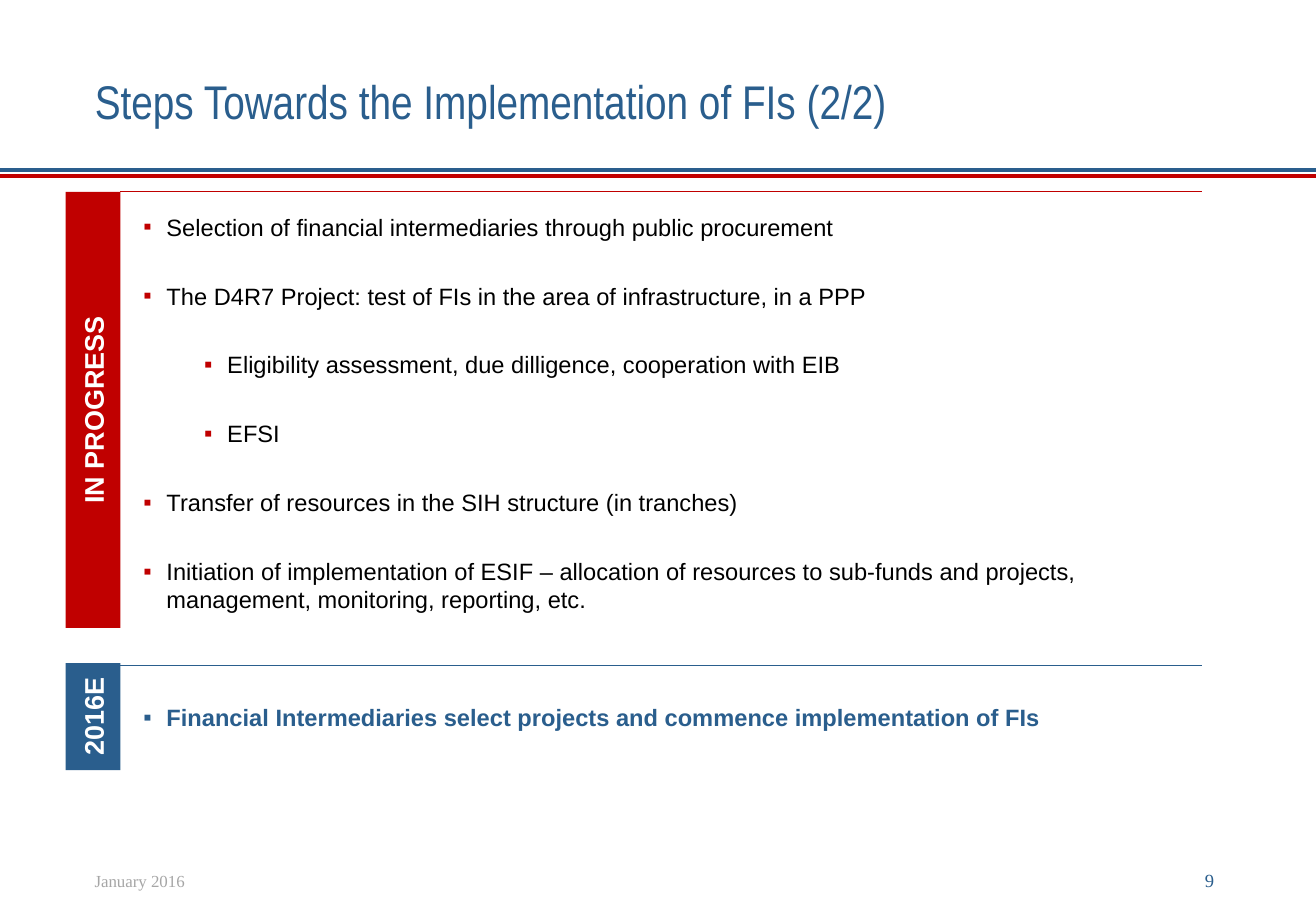
from lxml import etree
from pptx import Presentation
from pptx.dml.color import RGBColor
from pptx.enum.shapes import MSO_CONNECTOR, MSO_SHAPE
from pptx.enum.text import MSO_ANCHOR, MSO_AUTO_SIZE, PP_ALIGN
from pptx.oxml.ns import qn
from pptx.util import Inches, Pt

RECTANGLE = MSO_SHAPE.RECTANGLE
STRAIGHT = MSO_CONNECTOR.STRAIGHT
LEFT, CENTER, RIGHT = PP_ALIGN.LEFT, PP_ALIGN.CENTER, PP_ALIGN.RIGHT
TOP, MIDDLE = MSO_ANCHOR.TOP, MSO_ANCHOR.MIDDLE
NO_FIT = MSO_AUTO_SIZE.NONE

BLUE = RGBColor(0x2A, 0x5E, 0x8D)
RED = RGBColor(0xC0, 0x00, 0x00)
GRAY = RGBColor(0xA6, 0xA6, 0xA6)
BLACK = RGBColor(0, 0, 0)
WHITE = RGBColor(255, 255, 255)

WIDTH, HEIGHT = 10.83, 7.5
TWO_CONTENT_LAYOUT = 3

# Each step is a level and its text.
STEPS_IN_PROGRESS = [
    (0, "Selection of financial intermediaries through public procurement"),
    (0, "The D4R7 Project: test of FIs in the area of infrastructure, in a PPP"),
    (1, "Eligibility assessment, due dilligence, cooperation with EIB"),
    (1, "EFSI"),
    (0, "Transfer of resources in the SIH structure (in tranches)"),
    (0, "Initiation of implementation of ESIF – allocation of resources to "
        "sub-funds and projects, management, monitoring, reporting, etc."),
]
STEPS_EXPECTED = [
    (0, "Financial Intermediaries select projects and commence implementation of FIs"),
]


class SlideBuilder:
    """Holds the current slide and the style its elements share."""

    body_font = "Arial"
    title_font = "Arial Narrow"
    footer_font = "Times New Roman"
    bullet = "▪"
    bullet_indent = 0.19
    level_indent = 0.5

    def __init__(self, slide):
        self.slide = slide

    def place(self, shape, left, top, width, height):
        shape.left, shape.top = Inches(left), Inches(top)
        shape.width, shape.height = Inches(width), Inches(height)

    def frame(self, shape, anchor):
        text_frame = shape.text_frame
        text_frame.word_wrap = True
        text_frame.auto_size = NO_FIT
        text_frame.vertical_anchor = anchor
        return text_frame

    def add_text(self, paragraph, text, font, size, color, bold=False, align=LEFT):
        paragraph.alignment = align
        run = paragraph.add_run()
        run.text = text
        run.font.name, run.font.size = font, Pt(size)
        run.font.bold = bold
        run.font.color.rgb = color

    def title(self, text, *box):
        shape = self.slide.shapes.title
        self.place(shape, *box)
        paragraph = self.frame(shape, MIDDLE).paragraphs[0]
        paragraph.line_spacing = 0.9
        self.add_text(paragraph, text, self.title_font, 28, BLUE)

    def rule(self, left, right, y, color, weight):
        line = self.slide.shapes.add_connector(
            STRAIGHT, Inches(left), Inches(y), Inches(right), Inches(y))
        line.line.color.rgb = color
        line.line.width = Pt(weight)
        etree.SubElement(line.element.spPr, qn("a:effectLst"))

    def phase_bar(self, text, color, *box):
        """Draw a filled bar whose label reads upwards."""
        bar = self.slide.shapes.add_shape(RECTANGLE, *map(Inches, box))
        bar.shadow.inherit = False
        bar.fill.solid()
        bar.fill.fore_color.rgb = color
        bar.line.fill.background()
        text_frame = self.frame(bar, MIDDLE)
        bar.element.txBody.find(qn("a:bodyPr")).set("vert", "vert270")
        self.add_text(text_frame.paragraphs[0], text, self.body_font, 16, WHITE,
                      bold=True, align=CENTER)

    def add_bullet(self, paragraph, color):
        indent = self.bullet_indent + self.level_indent * paragraph.level
        properties = paragraph._p.get_or_add_pPr()
        properties.set("marL", str(Inches(indent)))
        properties.set("indent", str(-Inches(self.bullet_indent)))
        bullet_color = etree.SubElement(properties, qn("a:buClr"))
        etree.SubElement(bullet_color, qn("a:srgbClr"), val=str(color))
        etree.SubElement(properties, qn("a:buFont"), typeface=self.body_font)
        etree.SubElement(properties, qn("a:buChar"), char=self.bullet)

    def bullet_list(self, placeholder_index, steps, bullet_color, color,
                    space_after, bold, *box):
        shape = self.slide.placeholders[placeholder_index]
        self.place(shape, *box)
        text_frame = self.frame(shape, TOP)
        for number, (level, text) in enumerate(steps):
            paragraph = text_frame.add_paragraph() if number else text_frame.paragraphs[0]
            paragraph.level = level
            paragraph.space_before = Pt(6 if number else 0)
            paragraph.space_after = Pt(space_after)
            self.add_bullet(paragraph, bullet_color)
            self.add_text(paragraph, text, self.body_font, 14, color, bold)

    def footer(self, text, left, size, color, align):
        box = self.slide.shapes.add_textbox(
            Inches(left), Inches(7.05), Inches(1.2), Inches(0.4))
        paragraph = self.frame(box, MIDDLE).paragraphs[0]
        self.add_text(paragraph, text, self.footer_font, size, color, align=align)


def main():
    presentation = Presentation()
    presentation.slide_width = Inches(WIDTH)
    presentation.slide_height = Inches(HEIGHT)
    layout = presentation.slide_layouts[TWO_CONTENT_LAYOUT]
    builder = SlideBuilder(presentation.slides.add_slide(layout))

    builder.rule(0, WIDTH, 1.4, BLUE, 2.25)
    builder.rule(0, WIDTH, 1.45, RED, 2.25)
    builder.title("Steps Towards the Implementation of FIs (2/2)", 0.68, 0.36, 7.25, 0.99)

    builder.phase_bar("IN PROGRESS", RED, 0.54, 1.58, 0.45, 3.59)
    builder.rule(0.99, 9.89, 1.58, RED, 0.5)
    builder.bullet_list(1, STEPS_IN_PROGRESS, RED, BLACK, 18, False, 1.08, 1.7, 8.75, 3.43)

    builder.phase_bar("2016E", BLUE, 0.54, 5.46, 0.45, 0.88)
    builder.rule(0.99, 9.89, 5.48, BLUE, 0.5)
    builder.bullet_list(2, STEPS_EXPECTED, BLUE, BLUE, 6, True, 1.08, 5.74, 8.81, 0.34)

    builder.footer("January 2016", 0.68, 10, GRAY, LEFT)
    builder.footer("9", 8.89, 11, BLUE, RIGHT)

    presentation.save("out.pptx")


if __name__ == "__main__":
    main()
